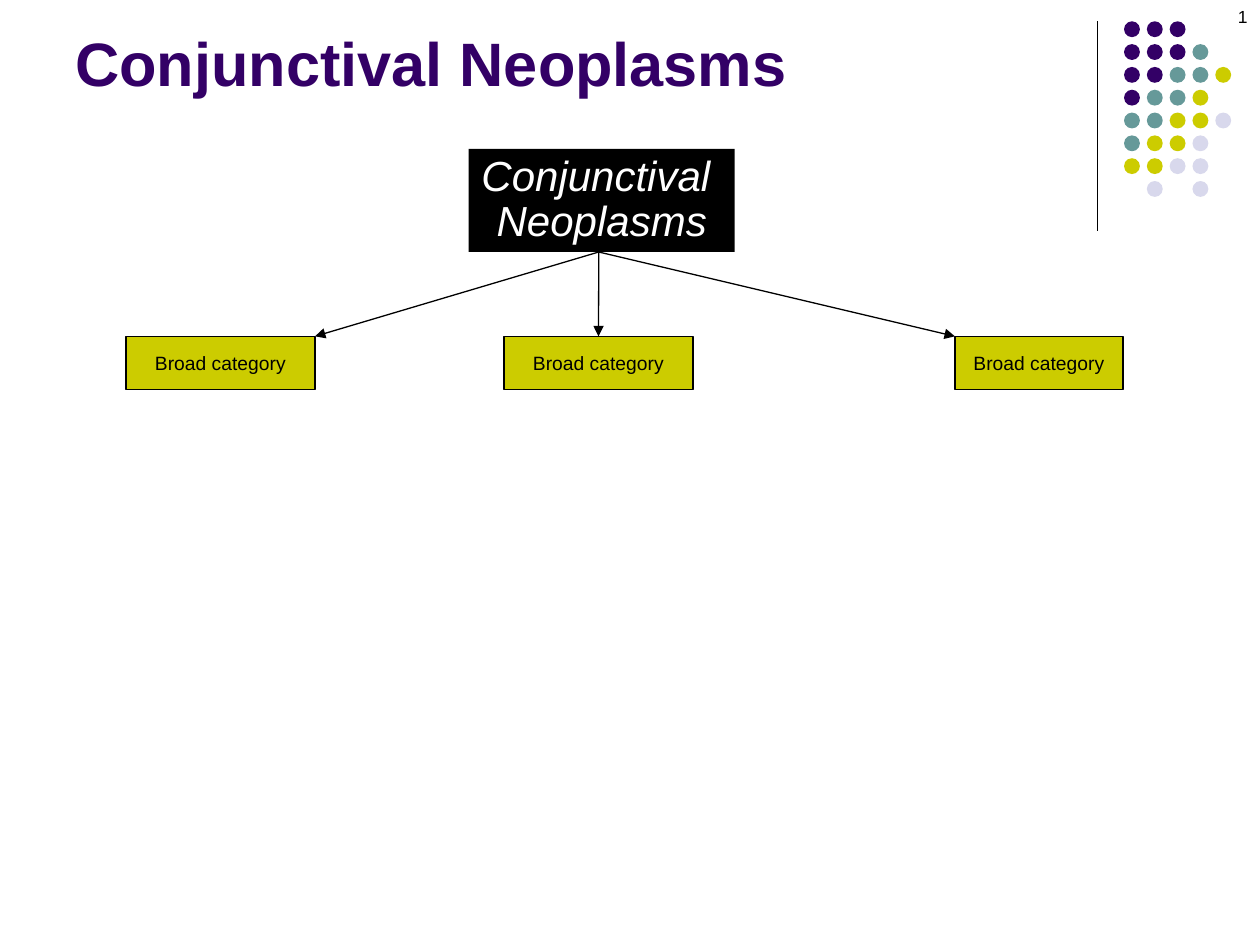
import dataclasses

import lxml.etree
import pptx
import pptx.dml.color
import pptx.enum.shapes
import pptx.enum.text
import pptx.oxml.ns
import pptx.util

Cm = pptx.util.Cm
Pt = pptx.util.Pt
SHAPE = pptx.enum.shapes.MSO_SHAPE
ALIGN = pptx.enum.text.PP_ALIGN
ANCHOR = pptx.enum.text.MSO_ANCHOR


@dataclasses.dataclass(frozen=True)
class Theme:
    font: str = "Arial"
    black: str = "000000"
    white: str = "FFFFFF"
    purple: str = "330066"
    teal: str = "669999"
    olive: str = "CCCC00"
    lavender: str = "D8D8EC"
    title_size: int = 35
    root_size: int = 24
    category_size: int = 11
    number_size: int = 10
    line_width: float = 0.75


def rgb(value):
    return pptx.dml.color.RGBColor.from_string(value)


class Deck:
    """Holds the theme and the current slide; lengths are centimetres."""

    def __init__(self, slide, theme):
        self.s = slide
        self.theme = theme

    def set_text(self, sp, text, size, color, align=ALIGN.LEFT, anchor=ANCHOR.TOP,
                 wrap=True, spacing=None, bold=None, italic=None):
        tf = sp.text_frame
        tf.text = text
        tf.word_wrap = wrap
        tf.vertical_anchor = anchor
        for p in tf.paragraphs:
            p.alignment = align
            p.line_spacing = spacing
            for r in p.runs:
                r.font.name = self.theme.font
                r.font.size = Pt(size)
                r.font.bold = bold
                r.font.italic = italic
                r.font.color.rgb = rgb(color)

    def textbox(self, x, y, w, h, text, size, color, **style):
        sp = self.s.shapes.add_textbox(Cm(x), Cm(y), Cm(w), Cm(h))
        self.set_text(sp, text, size, color, **style)

    def shape(self, kind, x, y, w, h, fill, outline=None):
        sp = self.s.shapes.add_shape(kind, Cm(x), Cm(y), Cm(w), Cm(h))
        sp.shadow.inherit = False
        sp.fill.solid()
        sp.fill.fore_color.rgb = rgb(fill)
        if outline:
            sp.line.color.rgb = rgb(outline)
            sp.line.width = Pt(self.theme.line_width)
        else:
            sp.line.fill.background()
        return sp

    def box(self, x, y, w, h, fill, text, size, color, outline=None, **style):
        sp = self.shape(SHAPE.RECTANGLE, x, y, w, h, fill, outline)
        self.set_text(sp, text, size, color, align=ALIGN.CENTER, wrap=False, **style)
        return sp

    def line(self, x1, y1, x2, y2, arrow=False):
        c = self.s.shapes.add_connector(
            pptx.enum.shapes.MSO_CONNECTOR.STRAIGHT, Cm(x1), Cm(y1), Cm(x2), Cm(y2))
        c.line.color.rgb = rgb(self.theme.black)
        c.line.width = Pt(self.theme.line_width)
        qn = pptx.oxml.ns.qn
        spPr = c._element.spPr
        if arrow:
            lxml.etree.SubElement(spPr.find(qn("a:ln")), qn("a:tailEnd"), type="triangle")
        lxml.etree.SubElement(spPr, qn("a:effectLst"))
        return c

    def dots(self, x, y, pitch, size, rows):
        """Draw one dot per letter; a full stop in the pattern leaves a gap."""
        t = self.theme
        colors = {"P": t.purple, "T": t.teal, "O": t.olive, "L": t.lavender}
        for i, row in enumerate(rows):
            for j, key in enumerate(row):
                if key in colors:
                    self.shape(SHAPE.OVAL, x + j * pitch, y + i * pitch, size, size, colors[key])


def main():
    prs = pptx.Presentation()
    prs.slide_width, prs.slide_height = Cm(25.4), Cm(19.05)
    t = Theme()
    deck = Deck(prs.slides.add_slide(prs.slide_layouts[6]), t)

    deck.line(22.12, 0.43, 22.12, 4.65)
    deck.dots(22.66, 0.43, 0.46, 0.32,
              ["PPP", "PPPT", "PPTTO", "PTTO", "TTOOL", "TOOL", "OOLL", ".L.L"])
    deck.textbox(1.27, 0.33, 20.96, 1.78, "Conjunctival Neoplasms",
                 t.title_size, t.purple, anchor=ANCHOR.BOTTOM, bold=True)

    deck.box(9.45, 3, 5.36, 2.08, t.black, "Conjunctival \nNeoplasms",
             t.root_size, t.white, spacing=0.9, italic=True)
    top = 6.78
    left, middle, right = [
        deck.box(x, top, w, 1.07, t.olive, "Broad category", t.category_size,
                 t.black, outline=t.black, anchor=ANCHOR.MIDDLE)
        for x, w in [(2.54, 3.81), (10.16, 3.81), (19.25, 3.39)]]

    # The outer arrows end at the inner corners of their boxes.
    hub_x, hub_y = 12.07, 5.08
    deck.line(hub_x, hub_y, left.left.cm + left.width.cm, top, arrow=True)
    deck.line(hub_x, hub_y, right.left.cm, top, arrow=True)
    deck.line(hub_x, hub_y, hub_x, top, arrow=True).end_connect(middle, 0)

    deck.textbox(19.48, 0, 5.92, 1.27, "1", t.number_size, t.black, align=ALIGN.RIGHT)

    prs.save("out.pptx")


if __name__ == "__main__":
    main()
